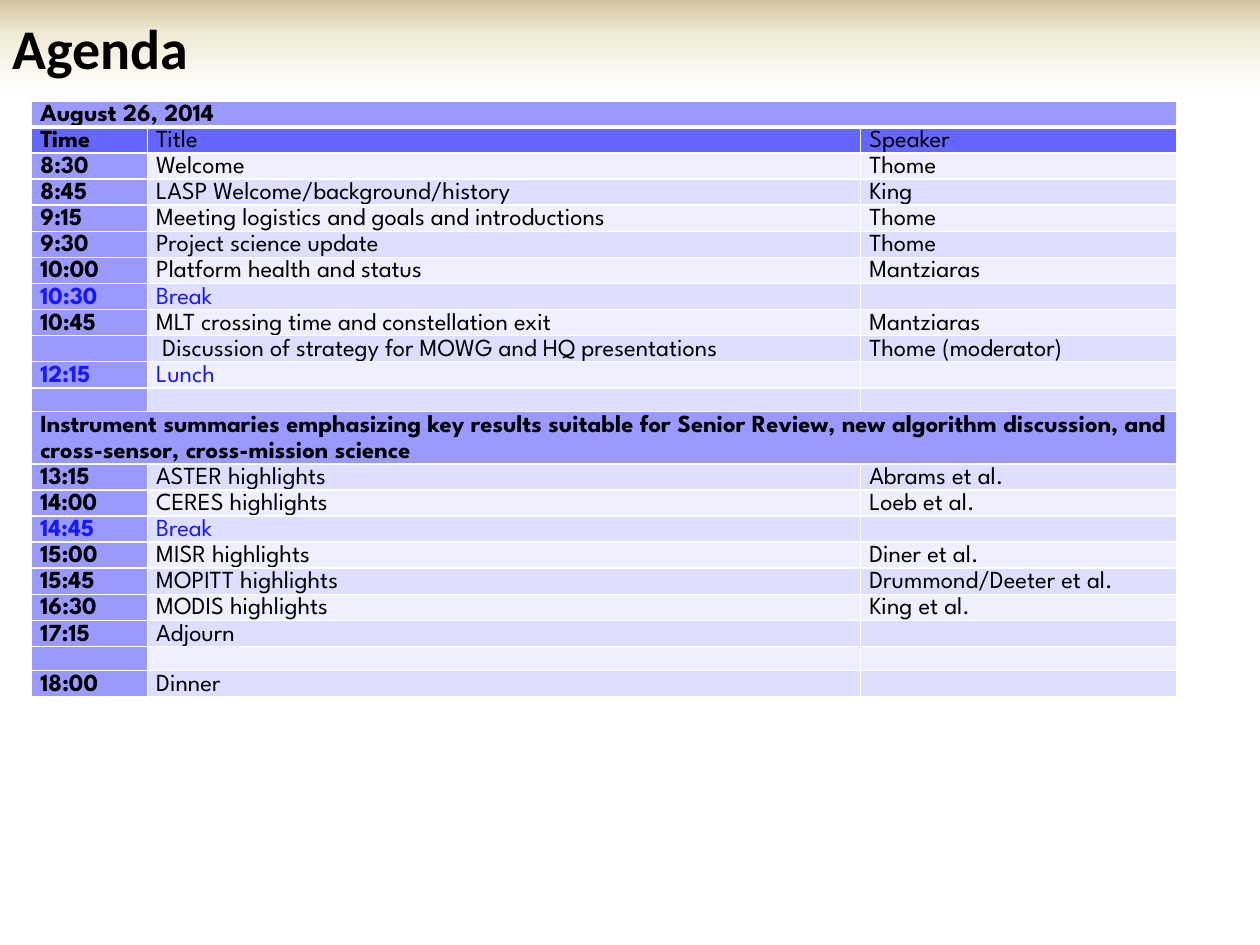
from copy import deepcopy
from dataclasses import dataclass

from lxml import etree
from pptx import Presentation
from pptx.dml.color import RGBColor
from pptx.enum import shapes, text
from pptx.oxml import ns
from pptx.util import Inches, Pt


@dataclass(frozen=True)
class Theme:
    title_font: str = "Calibri"
    table_font: str = "League Spartan"
    title_size: int = 32
    table_size: int = 14
    ink: str = "000000"
    pause: str = "1818FF"
    rule: str = "FFFFFF"
    label_fill: str = "9999FF"
    heading_fill: str = "6565FF"
    bands: tuple = ("EFEFFF", "DEDEFF")
    title_gradient: tuple = ((0, "FFFFFF"), (0.65, "F0EBD5"), (1, "D1C39F"))


THEME = Theme()
PAUSES = ("Break", "Lunch")
COLUMN_WIDTHS = (0.92, 5.66, 2.51)
ROW_HEIGHT = 0.19

# A row with a single entry spans the whole table.
AGENDA = [
    ("August 26, 2014",),
    ("Time", "Title", "Speaker"),
    ("8:30", "Welcome", "Thome"),
    ("8:45", "LASP Welcome/background/history", "King"),
    ("9:15", "Meeting logistics and goals and introductions", "Thome"),
    ("9:30", "Project science update", "Thome"),
    ("10:00", "Platform health and status", "Mantziaras"),
    ("10:30", "Break", ""),
    ("10:45", "MLT crossing time and constellation exit", "Mantziaras"),
    ("", "Discussion of strategy for MOWG and HQ presentations",
     "Thome (moderator)"),
    ("12:15", "Lunch", ""),
    ("", "", ""),
    ("Instrument summaries emphasizing key results suitable for Senior Review, "
     "new algorithm discussion, and cross-sensor, cross-mission science",),
    ("13:15", "ASTER highlights", "Abrams et al."),
    ("14:00", "CERES highlights", "Loeb et al."),
    ("14:45", "Break", ""),
    ("15:00", "MISR highlights", "Diner et al."),
    ("15:45", "MOPITT highlights", "Drummond/Deeter et al."),
    ("16:30", "MODIS highlights", "King et al."),
    ("17:15", "Adjourn", ""),
    ("", "", ""),
    ("18:00", "Dinner", ""),
]


def rgb(value):
    return RGBColor.from_string(value)


def format_run(run, font, size, color, bold):
    run.font.name = font
    run.font.size = Pt(size)
    run.font.color.rgb = rgb(color)
    run.font.bold = bold


def fill_gradient(shape, stops, angle):
    shape.fill.gradient()
    stop_list = shape.fill._xPr.find(".//" + ns.qn("a:gsLst"))
    while len(stop_list) < len(stops):
        stop_list.append(deepcopy(stop_list[0]))
    for stop, (position, color) in zip(shape.fill.gradient_stops, stops):
        stop.position = position
        stop.color.rgb = rgb(color)
    shape.fill.gradient_angle = angle


def add_title_band(slide, title):
    band = slide.shapes.add_shape(
        shapes.MSO_SHAPE.RECTANGLE, 0, 0, Inches(10), Inches(0.75))
    band.shadow.inherit = False
    band.line.fill.background()
    fill_gradient(band, THEME.title_gradient, 90)
    frame = band.text_frame
    frame.text = title
    frame.vertical_anchor = text.MSO_ANCHOR.MIDDLE
    paragraph = frame.paragraphs[0]
    paragraph.alignment = text.PP_ALIGN.LEFT
    format_run(paragraph.runs[0], THEME.title_font, THEME.title_size,
               THEME.ink, True)


def set_borders(cell, bottom_width):
    """Rule all four sides; borders must come before the fill in tcPr."""
    properties = cell._tc.get_or_add_tcPr()
    widths = {"lnL": 1, "lnR": 1, "lnT": 1, "lnB": bottom_width}
    for index, (side, width) in enumerate(widths.items()):
        line = etree.Element(ns.qn("a:" + side), w=str(Pt(width)))
        solid = etree.SubElement(line, ns.qn("a:solidFill"))
        etree.SubElement(solid, ns.qn("a:srgbClr"), val=THEME.rule)
        properties.insert(index, line)


def set_empty_line_size(paragraph):
    """Keep a row without text as low as the other rows."""
    end = etree.SubElement(paragraph._p, ns.qn("a:endParaRPr"),
                           sz=str(THEME.table_size * 100))
    etree.SubElement(end, ns.qn("a:latin"), typeface=THEME.table_font)


def write_cell(cell, entry, fill, color, bold, indent=0):
    cell.margin_left = Inches(0.07 + indent)
    cell.margin_right = Inches(0.07)
    cell.margin_top = cell.margin_bottom = 0
    cell.fill.solid()
    cell.fill.fore_color.rgb = rgb(fill)
    cell.text_frame.text = entry
    paragraph = cell.text_frame.paragraphs[0]
    paragraph.line_spacing = 1.15
    if entry:
        format_run(paragraph.runs[0], THEME.table_font, THEME.table_size,
                   color, bold)
    else:
        set_empty_line_size(paragraph)


def cell_fill(row, column, spans):
    if row == 1:
        return THEME.heading_fill
    if spans or column == 0:
        return THEME.label_fill
    return THEME.bands[row % 2]


def add_agenda_table(slide, agenda):
    heights = [ROW_HEIGHT * (2 if len(entries) == 1 and row else 1)
               for row, entries in enumerate(agenda)]
    table = slide.shapes.add_table(
        len(agenda), len(COLUMN_WIDTHS), Inches(0.25), Inches(0.8),
        Inches(sum(COLUMN_WIDTHS)), Inches(sum(heights))).table
    table.first_row = table.horz_banding = False
    for column, width in zip(table.columns, COLUMN_WIDTHS):
        column.width = Inches(width)

    for row, entries in enumerate(agenda):
        table.rows[row].height = Inches(heights[row])
        spans = len(entries) == 1
        if spans:
            table.cell(row, 0).merge(table.cell(row, len(COLUMN_WIDTHS) - 1))
            entries = entries + ("", "")
        color = THEME.pause if entries[1] in PAUSES else THEME.ink
        for column, entry in enumerate(entries):
            cell = table.cell(row, column)
            continues = column == 1 and entry and not entries[0]
            write_cell(cell, entry, cell_fill(row, column, spans), color,
                       bold=column == 0, indent=0.05 if continues else 0)
            set_borders(cell, bottom_width=3 if row == 0 else 1)


def main():
    deck = Presentation()
    deck.slide_width, deck.slide_height = Inches(10), Inches(7.5)
    slide = deck.slides.add_slide(deck.slide_layouts[6])
    add_title_band(slide, "Agenda")
    add_agenda_table(slide, AGENDA)
    deck.save("out.pptx")


if __name__ == "__main__":
    main()
